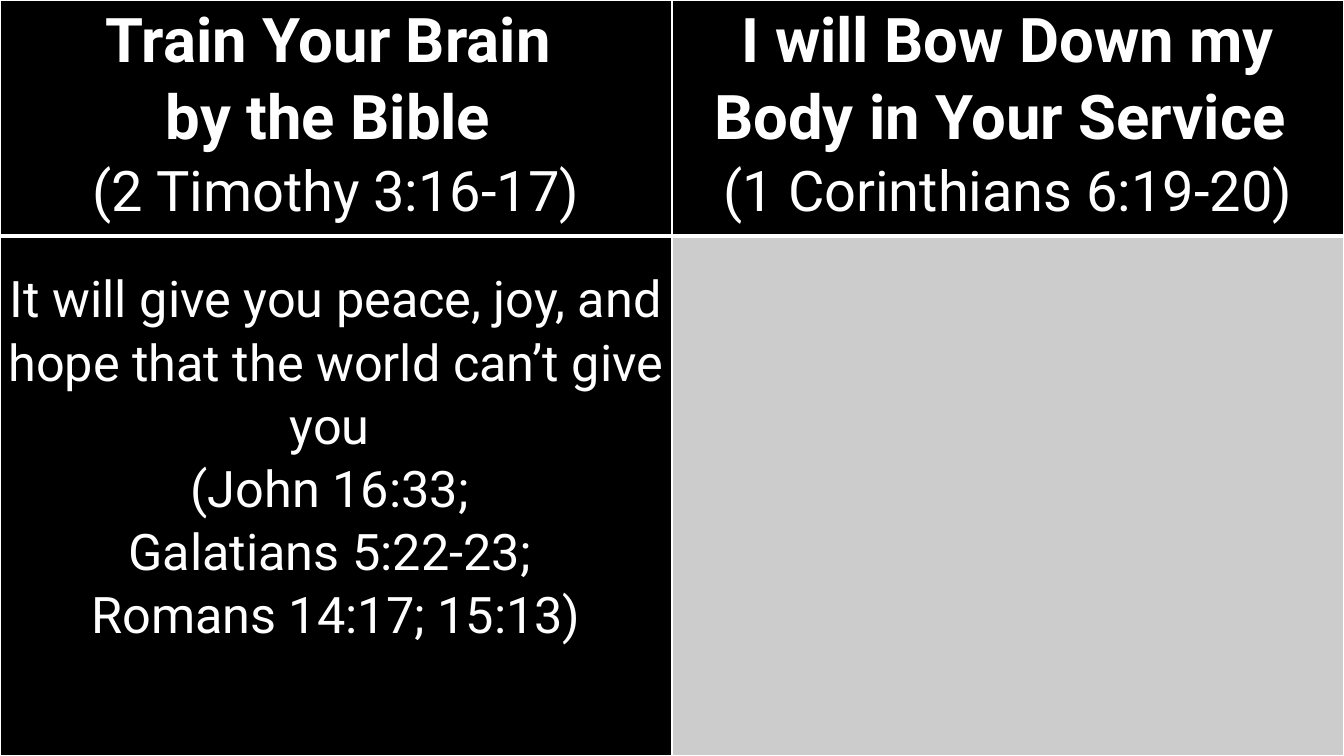
from dataclasses import dataclass

from lxml.etree import SubElement
from pptx import Presentation
from pptx.dml.color import RGBColor
from pptx.enum.text import PP_ALIGN
from pptx.oxml.ns import qn
from pptx.util import Inches, Pt


@dataclass(frozen=True)
class Theme:
    font: str = "Roboto"
    ink: str = "FFFFFF"
    ground: str = "000000"
    blank: str = "CCCCCC"
    title: int = 44
    reference: int = 40
    body: int = 36
    line_spacing: float = 1.07
    thin: int = 1
    thick: int = 3


def apply(target, values):
    for name, value in values.items():
        setattr(target, name, value)


class SlideBuilder:
    def __init__(self, deck, theme):
        self.theme = theme
        self.page = deck.slides.add_slide(deck.slide_layouts[6])

    def background(self):
        fill = self.page.background.fill
        fill.solid()
        fill.fore_color.rgb = RGBColor.from_string(self.theme.ground)

    def table(self, width, column_count, row_heights):
        frame = self.page.shapes.add_table(
            len(row_heights), column_count, 0, 0, Inches(width), Inches(sum(row_heights)))
        table = frame.table
        apply(table, {"first_row": False, "horz_banding": False})
        for column in table.columns:
            column.width = Inches(width / column_count)
        for row, height in zip(table.rows, row_heights):
            row.height = Inches(height)
        return table

    def cell(self, cell, lines, color, bottom, top_gap=0):
        apply(cell, {"margin_left": Inches(0.07), "margin_right": Inches(0.07),
                     "margin_top": Inches(top_gap), "margin_bottom": 0})
        self.borders(cell, bottom)
        cell.fill.solid()
        cell.fill.fore_color.rgb = RGBColor.from_string(color)
        for index, line in enumerate(lines):
            frame = cell.text_frame
            para = frame.add_paragraph() if index else frame.paragraphs[0]
            self.line(para, *line)

    def line(self, para, text, size, bold=False):
        apply(para, {"alignment": PP_ALIGN.CENTER,
                     "line_spacing": self.theme.line_spacing})
        span = para.add_run()
        span.text = text
        apply(span.font, {"name": self.theme.font, "size": Pt(size), "bold": bold})
        span.font.color.rgb = RGBColor.from_string(self.theme.ink)

    def borders(self, cell, bottom):
        properties = cell._tc.get_or_add_tcPr()
        thin = self.theme.thin
        for side, width in {"L": thin, "R": thin, "T": thin, "B": bottom}.items():
            edge = SubElement(properties, qn(f"a:ln{side}"), w=str(Pt(width)))
            fill = SubElement(edge, qn("a:solidFill"))
            SubElement(fill, qn("a:srgbClr"), val=self.theme.ink)


def main():
    theme = Theme()
    deck = Presentation()
    apply(deck, {"slide_width": Inches(13.33), "slide_height": Inches(7.5)})
    builder = SlideBuilder(deck, theme)
    builder.background()
    table = builder.table(13.33, 2, [2.34, 5.16])

    # Headings: bold title lines with the scripture reference below
    headings = [
        (["Train Your Brain ", "by the Bible "], "(2 Timothy 3:16-17)"),
        (["I will Bow Down my Body in Your Service "], "(1 Corinthians 6:19-20)"),
    ]
    for column, (titles, reference) in enumerate(headings):
        lines = [(title, theme.title, True) for title in titles]
        lines.append((reference, theme.reference))
        builder.cell(table.cell(0, column), lines, theme.ground, theme.thick)

    # Promise on the left, empty panel on the right
    promise = [
        "It will give you peace, joy, and hope that the world can’t give you ",
        "(John 16:33; ",
        "Galatians 5:22-23; ",
        "Romans 14:17; 15:13)",
    ]
    builder.cell(table.cell(1, 0), [(text, theme.body) for text in promise],
                 theme.ground, theme.thin, top_gap=0.31)
    builder.cell(table.cell(1, 1), [], theme.blank, theme.thin)

    deck.save("out.pptx")


if __name__ == "__main__":
    main()
